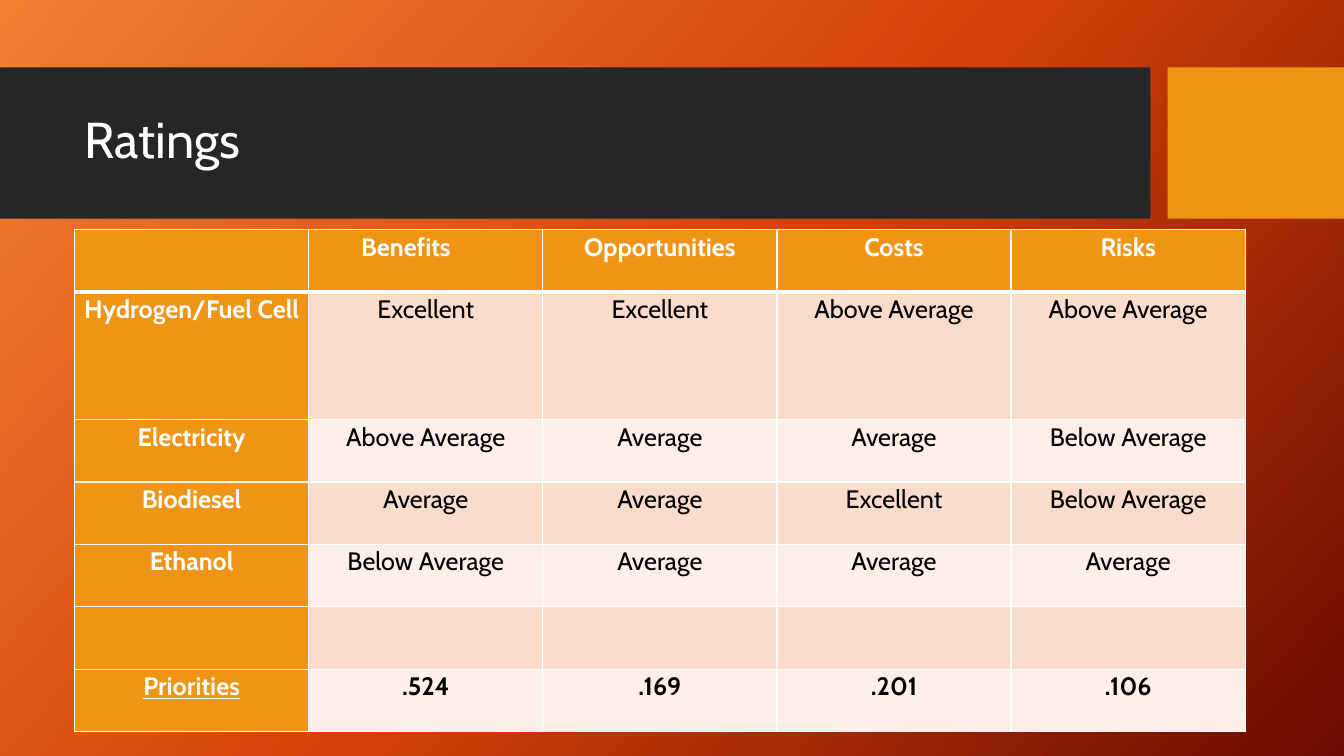
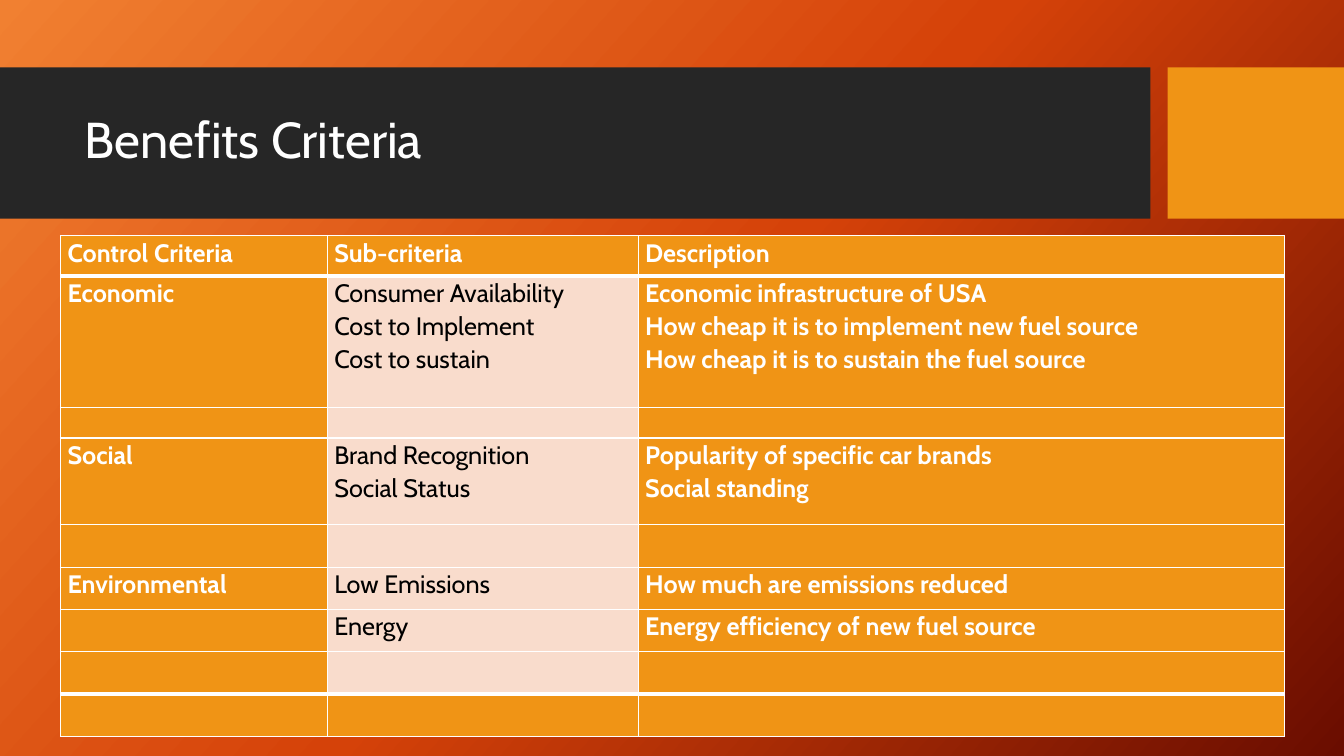
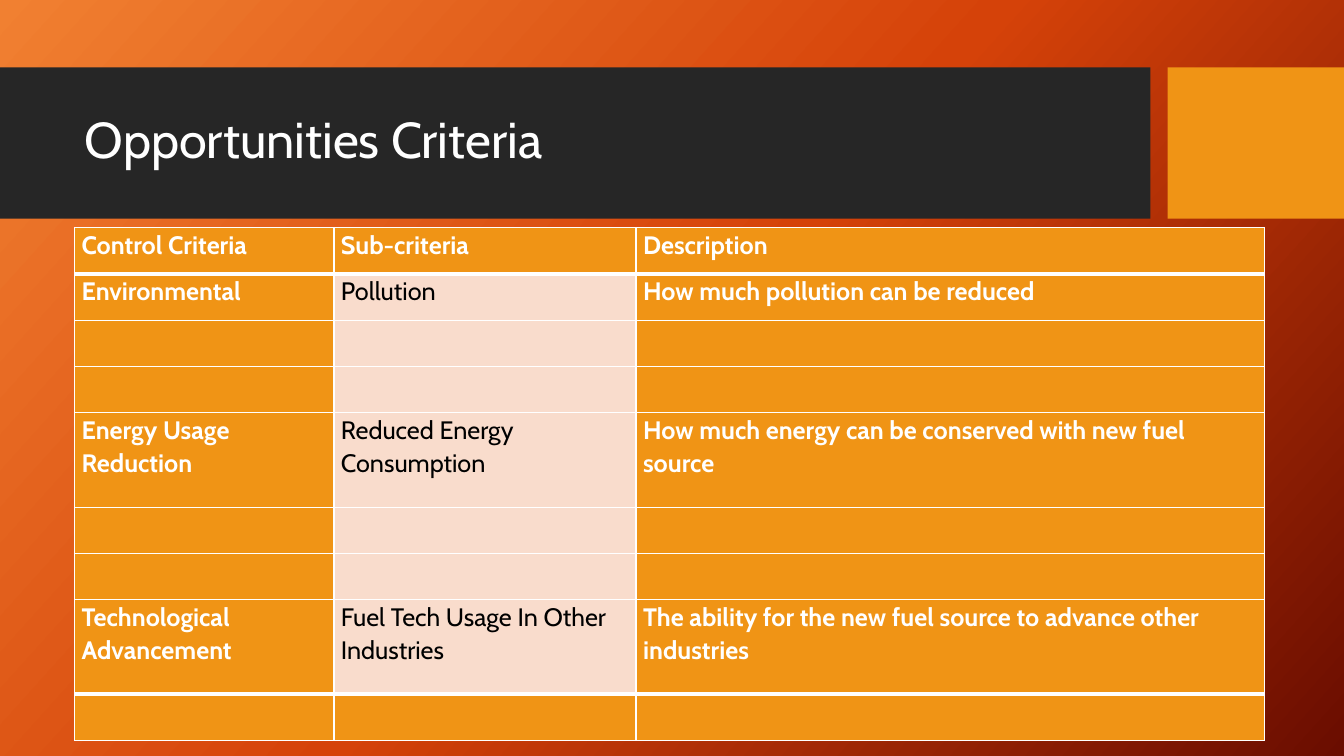
"""Build three slides that rate alternative fuels and list their criteria."""
import copy
import dataclasses
import itertools

import lxml.etree
import pptx
import pptx.dml.color
import pptx.enum.shapes
import pptx.enum.text
import pptx.oxml.ns
import pptx.slide
import pptx.table
import pptx.util

ALIGN = pptx.enum.text.PP_ALIGN
MIDDLE = pptx.enum.text.MSO_ANCHOR.MIDDLE


@dataclasses.dataclass(frozen=True)
class Theme:
    """Hold the colours, type sizes and line widths of the presentation."""

    font: str = "Cabin"
    title_size: int = 36
    table_size: int = 18
    white: str = "FFFFFF"
    black: str = "000000"
    band: str = "262626"
    accent: str = "F09415"
    tint: str = "F9DCCC"
    pale_tint: str = "FCEEE8"
    gradient: tuple[str, ...] = ("F18031", "D54209", "6A0D00")
    gradient_angle: int = 42
    thin_line: int = 1
    heavy_line: int = 3


@dataclasses.dataclass(frozen=True)
class Box:
    """Hold a rectangle in percent of the slide's width and height."""

    left: float
    top: float
    width: float
    height: float

    def lengths(self) -> tuple[pptx.util.Emu, ...]:
        """Return left, top, width and height as lengths."""
        return across(self.left), down(self.top), across(self.width), down(self.height)


@dataclasses.dataclass(frozen=True)
class CellStyle:
    """Describe how a table cell looks."""

    fill: str
    color: str
    bold: bool = False
    underline: bool = False
    alignment: ALIGN = ALIGN.LEFT
    inset: float = 0.07


@dataclasses.dataclass(frozen=True)
class TableSlide:
    """Describe a slide with a title and a table."""

    title: str
    box: Box
    columns: tuple[float, ...]
    rows: tuple[float, ...]
    texts: tuple[tuple[str, ...], ...]
    is_ratings: bool = False


THEME = Theme()
SLIDE_WIDTH = pptx.util.Inches(13.33)
SLIDE_HEIGHT = pptx.util.Inches(7.5)
TITLE_BOX = Box(5.55, 10.93, 78.84, 15.73)
BANDS = (
    (Box(0, 8.93, 85.6, 20), THEME.band),
    (Box(86.87, 8.93, 13.13, 20), THEME.accent),
)
CRITERIA_COLUMNS = (21.8, 25.4, 52.8)
CRITERIA_HEADER = ("Control Criteria", "Sub-criteria", "Description")
EMPTY_CRITERIA = ("", "", "")

SLIDES = (
    TableSlide(
        "Ratings",
        Box(5.55, 30.4, 87.1, 66.4),
        (1,) * 5,
        (1, 2.04, 1, 1, 1, 1, 1),
        (
            ("", "Benefits", "Opportunities", "Costs", "Risks"),
            ("Hydrogen/Fuel Cell", "Excellent", "Excellent", "Above Average", "Above Average"),
            ("Electricity", "Above Average", "Average", "Average", "Below Average"),
            ("Biodiesel", "Average", "Average", "Excellent", "Below Average"),
            ("Ethanol", "Below Average", "Average", "Average", "Average"),
            ("",) * 5,
            ("Priorities", ".524", ".169", ".201", ".106"),
        ),
        is_ratings=True,
    ),
    TableSlide(
        "Benefits Criteria",
        Box(4.5, 31.2, 91.07, 66),
        CRITERIA_COLUMNS,
        (0.95, 3.1, 0.69, 2.05, 1, 1, 1, 1, 1),
        (
            CRITERIA_HEADER,
            (
                "Economic",
                "Consumer Availability\nCost to Implement\nCost to sustain",
                "Economic infrastructure of USA\n"
                "How cheap it is to implement new fuel source\n"
                "How cheap it is to sustain the fuel source",
            ),
            EMPTY_CRITERIA,
            (
                "Social",
                "Brand Recognition\nSocial Status",
                "Popularity of specific car brands\nSocial standing",
            ),
            EMPTY_CRITERIA,
            ("Environmental", "Low Emissions", "How much are emissions reduced"),
            ("", "Energy", "Energy efficiency of new fuel source"),
            EMPTY_CRITERIA,
            EMPTY_CRITERIA,
        ),
    ),
    TableSlide(
        "Opportunities Criteria",
        Box(5.55, 30.1, 88.52, 67.87),
        CRITERIA_COLUMNS,
        (1, 1, 1, 1, 2.04, 1, 1, 2.04, 1),
        (
            CRITERIA_HEADER,
            ("Environmental", "Pollution", "How much pollution can be reduced"),
            EMPTY_CRITERIA,
            EMPTY_CRITERIA,
            (
                "Energy Usage Reduction",
                "Reduced Energy Consumption",
                "How much energy can be conserved with new fuel source",
            ),
            EMPTY_CRITERIA,
            EMPTY_CRITERIA,
            (
                "Technological Advancement",
                "Fuel Tech Usage In Other Industries",
                "The ability for the new fuel source to advance other industries",
            ),
            EMPTY_CRITERIA,
        ),
    ),
)


def across(percent: float) -> pptx.util.Emu:
    """Return a share of the slide's width."""
    return pptx.util.Emu(int(SLIDE_WIDTH * percent / 100))


def down(percent: float) -> pptx.util.Emu:
    """Return a share of the slide's height."""
    return pptx.util.Emu(int(SLIDE_HEIGHT * percent / 100))


def rgb(color: str) -> pptx.dml.color.RGBColor:
    """Return a colour object for a hexadecimal string."""
    return pptx.dml.color.RGBColor.from_string(color)


def paint_background(layout: pptx.slide.SlideLayout) -> None:
    """Give the layout its diagonal gradient."""
    fill = layout.background.fill
    fill.gradient()
    fill.gradient_angle = 360 - THEME.gradient_angle
    stop_list = next(layout.element.iter(pptx.oxml.ns.qn("a:gsLst")))
    stop_list.insert(1, copy.deepcopy(stop_list[0]))
    for index, (stop, color) in enumerate(zip(fill.gradient_stops, THEME.gradient)):
        stop.color.rgb = rgb(color)
        stop.position = index / (len(THEME.gradient) - 1)


def prepare_layout(layout: pptx.slide.SlideLayout) -> None:
    """Keep only the layout's title, put it in place and paint the background."""
    for placeholder in list(layout.placeholders):
        if placeholder.placeholder_format.idx:
            placeholder.element.getparent().remove(placeholder.element)
        else:
            position = TITLE_BOX.lengths()
            placeholder.left, placeholder.top, placeholder.width, placeholder.height = position
    paint_background(layout)


def add_bands(slide: pptx.slide.Slide) -> None:
    """Draw the title bands and move them behind the title of the slide's layout."""
    layout_tree = slide.slide_layout.shapes.element
    for index, (box, color) in enumerate(BANDS):
        shape = slide.shapes.add_shape(
            pptx.enum.shapes.MSO_SHAPE.RECTANGLE, *box.lengths()
        )
        shape.shadow.inherit = False
        shape.fill.solid()
        shape.fill.fore_color.rgb = rgb(color)
        shape.line.fill.background()
        layout_tree.insert(2 + index, shape.element)


def add_title(slide: pptx.slide.Slide, text: str) -> None:
    """Fill and format the title placeholder."""
    text_frame = slide.shapes.title.text_frame
    text_frame.text = text
    text_frame.vertical_anchor = MIDDLE
    paragraph = text_frame.paragraphs[0]
    paragraph.alignment = ALIGN.LEFT
    paragraph.line_spacing = 0.9
    font = paragraph.runs[0].font
    font.name = THEME.font
    font.size = pptx.util.Pt(THEME.title_size)
    font.color.rgb = rgb(THEME.white)


def ratings_style(row: int, column: int, last_row: int) -> CellStyle:
    """Return the style of a cell in the ratings table."""
    if row == 0 and column == 1:
        return CellStyle(THEME.accent, THEME.white, bold=True, inset=0.52)
    if row == 0 or column == 0:
        return CellStyle(
            THEME.accent, THEME.white, True, row == last_row, ALIGN.CENTER
        )
    fill = THEME.tint if row % 2 else THEME.pale_tint
    return CellStyle(fill, THEME.black, row == last_row, alignment=ALIGN.CENTER)


def criteria_style(row: int, column: int, last_row: int) -> CellStyle:
    """Return the style of a cell in a criteria table."""
    if column == 1 and 0 < row < last_row:
        return CellStyle(THEME.tint, THEME.black)
    return CellStyle(THEME.accent, THEME.white, bold=True)


def add_borders(cell: pptx.table._Cell, top: int, bottom: int) -> None:
    """Draw white borders around a cell."""
    properties = cell._tc.get_or_add_tcPr()
    widths = {"L": THEME.thin_line, "R": THEME.thin_line, "T": top, "B": bottom}
    for side, width in widths.items():
        line = lxml.etree.SubElement(
            properties, pptx.oxml.ns.qn(f"a:ln{side}"), w=str(pptx.util.Pt(width))
        )
        fill = lxml.etree.SubElement(line, pptx.oxml.ns.qn("a:solidFill"))
        lxml.etree.SubElement(fill, pptx.oxml.ns.qn("a:srgbClr"), val=THEME.white)


def fill_cell(cell: pptx.table._Cell, text: str, style: CellStyle) -> None:
    """Write a cell's text and apply its style."""
    cell.fill.solid()
    cell.fill.fore_color.rgb = rgb(style.fill)
    cell.margin_left = pptx.util.Inches(style.inset)
    cell.margin_right = pptx.util.Inches(0.07)
    cell.margin_top = cell.margin_bottom = 0
    cell.text_frame.text = text
    for paragraph in cell.text_frame.paragraphs:
        paragraph.alignment = style.alignment
        paragraph.line_spacing = 1.07
        for run in paragraph.runs:
            run.font.name = THEME.font
            run.font.size = pptx.util.Pt(THEME.table_size)
            run.font.bold = style.bold
            run.font.underline = style.underline
            run.font.color.rgb = rgb(style.color)


def add_table(slide: pptx.slide.Slide, content: TableSlide) -> None:
    """Draw the table, sharing its box out among columns and rows."""
    row_count, column_count = len(content.rows), len(content.columns)
    left, top, width, height = content.box.lengths()
    table = slide.shapes.add_table(
        row_count, column_count, left, top, width, height
    ).table
    table.first_row = table.horz_banding = False
    for column, weight in zip(table.columns, content.columns):
        column.width = int(width * weight / sum(content.columns))
    for row, weight in zip(table.rows, content.rows):
        row.height = int(height * weight / sum(content.rows))

    edges = [THEME.thin_line] * (row_count + 1)
    edges[1] = THEME.heavy_line
    if not content.is_ratings:
        edges[-2] = THEME.heavy_line
    choose_style = ratings_style if content.is_ratings else criteria_style
    for row, column in itertools.product(range(row_count), range(column_count)):
        cell = table.cell(row, column)
        add_borders(cell, edges[row], edges[row + 1])
        style = choose_style(row, column, row_count - 1)
        fill_cell(cell, content.texts[row][column], style)


def main() -> None:
    """Build and save the presentation."""
    presentation = pptx.Presentation()
    presentation.slide_width = SLIDE_WIDTH
    presentation.slide_height = SLIDE_HEIGHT
    layout = presentation.slide_layouts.get_by_name("Title Only")
    prepare_layout(layout)
    for content in SLIDES:
        slide = presentation.slides.add_slide(layout)
        if content is SLIDES[0]:
            add_bands(slide)
        add_title(slide, content.title)
        add_table(slide, content)
    presentation.save("out.pptx")


if __name__ == "__main__":
    main()
